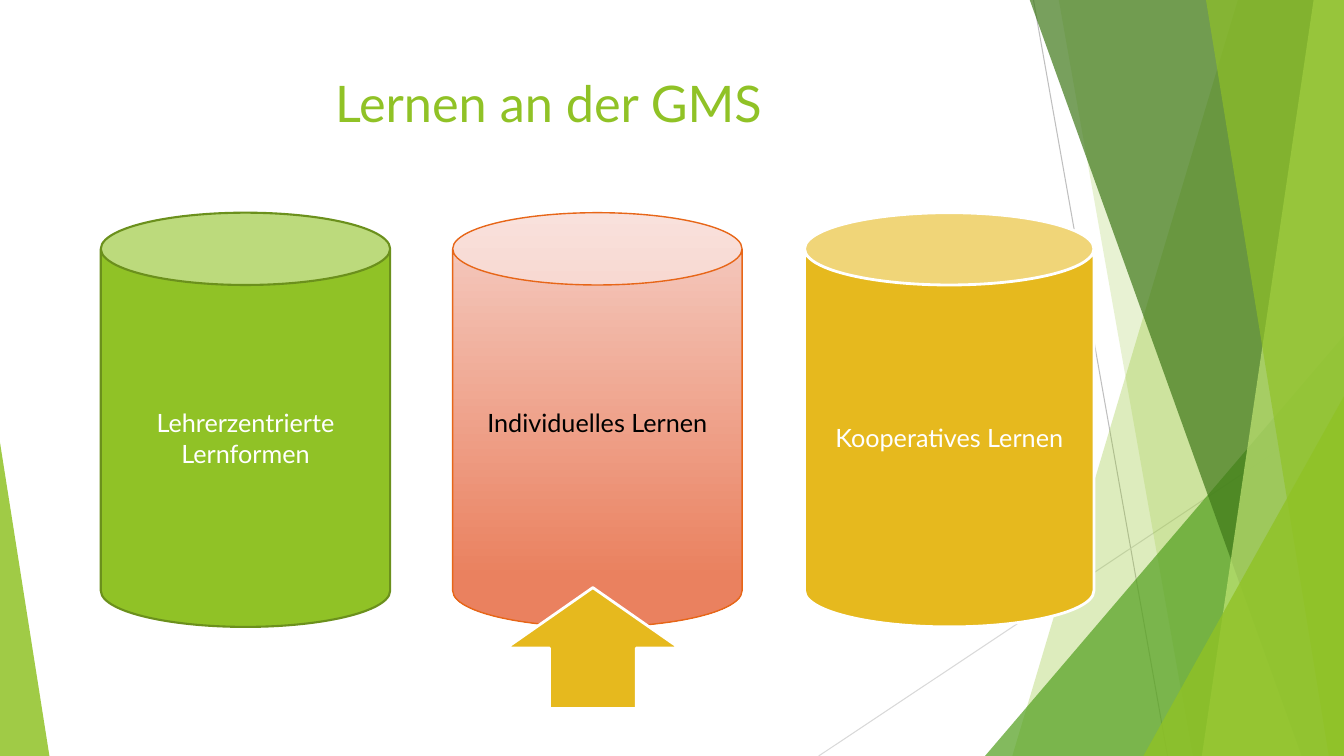
import pptx
import pptx.dml.color
import pptx.enum.shapes
import pptx.enum.text
import pptx.oxml.ns
import pptx.util
from lxml import etree

Inches = pptx.util.Inches
Pt = pptx.util.Pt
SHAPE = pptx.enum.shapes.MSO_SHAPE
ANCHOR = pptx.enum.text.MSO_ANCHOR
CENTER = pptx.enum.text.PP_ALIGN.CENTER

WIDTH, HEIGHT, TOP = 13.33, 7.5, -0.01
GREEN, GOLD, WHITE = "90C226", "E6B91E", "FFFFFF"


def color(value):
    return pptx.dml.color.RGBColor.from_string(value)


def format_object(target, values):
    for name, value in values.items():
        setattr(target, name, value)


def fill_solid(shape, fill, opacity=100):
    shape.shadow.inherit = False
    shape.fill.solid()
    shape.fill.fore_color.rgb = color(fill)
    if opacity < 100:
        rgb = shape.fill._xPr.find(".//" + pptx.oxml.ns.qn("a:srgbClr"))
        etree.SubElement(rgb, pptx.oxml.ns.qn("a:alpha"), val=str(opacity * 1000))


def fill_gradient(shape, stops):
    """Fill from top to bottom with two (position, colour) stops."""
    shape.shadow.inherit = False
    shape.fill.gradient()
    shape.fill.gradient_angle = 270
    for stop, (position, value) in zip(shape.fill.gradient_stops, stops):
        stop.position = position
        stop.color.rgb = color(value)


def set_outline(shape, line, width):
    shape.line.color.rgb = color(line)
    shape.line.width = Pt(width)


def add_shape(slide, kind, left, top, width, height):
    return slide.shapes.add_shape(
        kind, Inches(left), Inches(top), Inches(width), Inches(height))


def add_hairline(slide, start, end, line):
    connector = slide.shapes.add_connector(
        pptx.enum.shapes.MSO_CONNECTOR.STRAIGHT,
        *[Inches(value) for value in (*start, *end)])
    set_outline(connector, line, 0.75)
    etree.SubElement(connector._element.spPr, pptx.oxml.ns.qn("a:effectLst"))


def add_panel(slide, top_x, bottom_x, fill, opacity):
    """Add a full-height panel with a slanted left edge, ending at the right slide edge."""
    corners = [(Inches(x), Inches(y)) for x, y in (
        (top_x, TOP), (WIDTH, TOP), (WIDTH, HEIGHT), (bottom_x, HEIGHT))]
    builder = slide.shapes.build_freeform(*corners[0])
    builder.add_line_segments(corners[1:], close=True)
    panel = builder.convert_to_shape()
    fill_solid(panel, fill, opacity)
    panel.line.fill.background()


def add_wedge(slide, left, top, width, apex, fill, opacity):
    """Add a triangle standing on the bottom slide edge."""
    wedge = add_shape(slide, SHAPE.ISOSCELES_TRIANGLE, left, top, width, HEIGHT - top)
    wedge.adjustments[0] = apex
    fill_solid(wedge, fill, opacity)
    wedge.line.fill.background()


def add_background(slide):
    add_hairline(slide, (10.25, 0), (11.58, HEIGHT), "BFBFBF")
    add_hairline(slide, (WIDTH, 4.03), (8.12, HEIGHT), "D9D9D9")
    add_panel(slide, 12.28, 10.04, GREEN, 30)
    add_panel(slide, 10.5, 11.83, GREEN, 20)
    add_wedge(slide, 9.77, 3.33, 3.56, 1, "54A021", 72)
    add_panel(slide, 10.21, 12.91, "3F7819", 70)
    add_panel(slide, 13.03, 11.92, "C0E474", 70)
    add_panel(slide, 11.96, 13.18, GREEN, 65)
    add_wedge(slide, 11.34, 3.93, 1.99, 1, GREEN, 80)
    add_wedge(slide, 0, 4.39, 0.49, 0, GREEN, 85)


def write_text(frame, lines, size, value, anchor):
    format_object(frame, {"word_wrap": True, "vertical_anchor": anchor})
    for index, line in enumerate(lines):
        paragraph = frame.add_paragraph() if index else frame.paragraphs[0]
        paragraph.alignment = CENTER
        run = paragraph.add_run()
        run.text = line
        format_object(run.font, {"name": "Lato", "size": Pt(size)})
        run.font.color.rgb = color(value)


def add_title(slide, text):
    title = slide.shapes.title
    format_object(title, {"left": Inches(0.74), "top": Inches(0.67),
                          "width": Inches(9.4), "height": Inches(1.44)})
    write_text(title.text_frame, [text], 36, GREEN, ANCHOR.TOP)
    # Keep the title above the background panels.
    slide.shapes._spTree.append(title._element)


def add_pillar(slide, column, lines, text_color, outline):
    pillar = add_shape(slide, SHAPE.CAN, 1 + 3.49 * column, 2.11, 2.87, 4.11)
    set_outline(pillar, *outline)
    write_text(pillar.text_frame, lines, 18, text_color, ANCHOR.MIDDLE)
    return pillar


def main():
    presentation = pptx.Presentation()
    format_object(presentation, {"slide_width": Inches(WIDTH), "slide_height": Inches(HEIGHT)})
    slide = presentation.slides.add_slide(presentation.slide_layouts[5])
    add_background(slide)
    add_title(slide, "Lernen an der GMS")

    teacher_led = add_pillar(slide, 0, ["Lehrerzentrierte", "Lernformen"], WHITE, ("6B901C", 1.5))
    fill_solid(teacher_led, GREEN)
    individual = add_pillar(slide, 1, ["Individuelles Lernen"], "000000", ("E76618", 1))
    fill_gradient(individual, [(0, "F5CEC5"), (0.88, "EA815F")])
    individual.text_frame.margin_bottom = Inches(0.35)
    cooperative = add_pillar(slide, 2, ["Kooperatives Lernen"], WHITE, (WHITE, 2))
    fill_solid(cooperative, GOLD)

    arrow = add_shape(slide, SHAPE.UP_ARROW, 5.02, 5.83, 1.72, 1.2)
    fill_solid(arrow, GOLD)
    set_outline(arrow, WHITE, 2)
    presentation.save("out.pptx")


if __name__ == "__main__":
    main()
